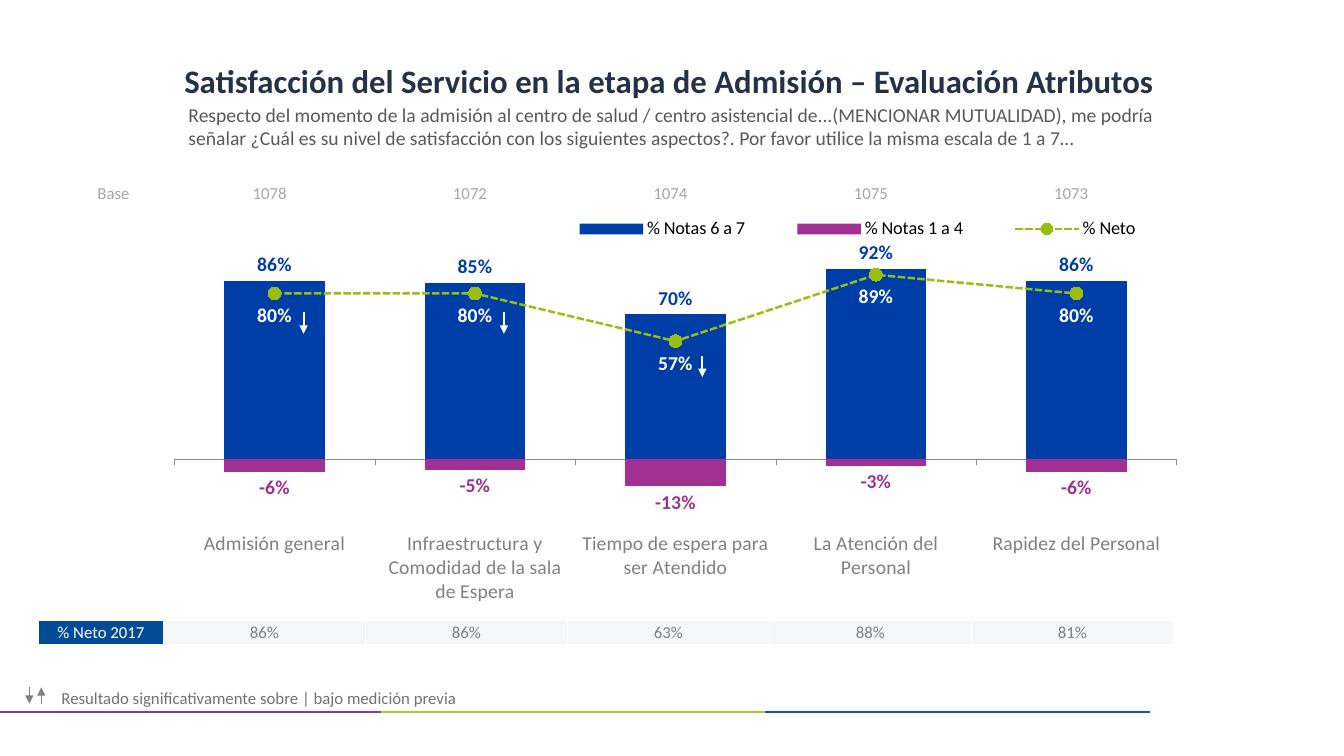
import pptx
import pptx.util
import pptx.dml.color
import pptx.chart.data
import pptx.enum.chart
import pptx.enum.dml
import pptx.enum.shapes
import pptx.enum.text
import pptx.oxml.ns
import pptx.oxml.xmlchemy
from lxml import etree

Cm, Pt = pptx.util.Cm, pptx.util.Pt
qn = pptx.oxml.ns.qn
make = pptx.oxml.xmlchemy.OxmlElement
enum = pptx.enum.chart

# Content
TITLE = "Satisfacción del Servicio en la etapa de Admisión – Evaluación Atributos"
ASK = ("Respecto del momento de la admisión al centro de salud / centro asistencial "
       "de...(MENCIONAR MUTUALIDAD), me podría señalar ¿Cuál es su nivel de satisfacción "
       "con los siguientes aspectos?. Por favor utilice la misma escala de 1 a 7…")
NOTE = "Resultado significativamente sobre | bajo medición previa"
CATS = ["Admisión general", "Infraestructura y Comodidad de la sala de Espera",
        "Tiempo de espera para ser Atendido", "La Atención del Personal",
        "Rapidez del Personal"]
BASE = ["Base", "1078", "1072", "1074", "1075", "1073"]
NET = ["% Neto 2017", "86%", "86%", "63%", "88%", "81%"]
# name, values, colour, label colour, label place
SERIES = [
    ("% Notas 6 a 7", (0.86, 0.85, 0.7, 0.92, 0.86), "blue", "blue", "OUTSIDE_END"),
    ("% Notas 1 a 4", (-0.06, -0.05, -0.13, -0.03, -0.06), "plum", "plum", "OUTSIDE_END"),
    ("% Neto", (0.8, 0.8, 0.57, 0.89, 0.8), "lime", "white", "BELOW"),
]
HEX = {"navy": "233247", "text": "595959", "blue": "003EA7", "plum": "A03192",
       "lime": "99BD13", "white": "FFFFFF", "gray": "808080", "pale": "A6A6A6",
       "note": "717274", "head": "044B95", "cell": "F5F6F8", "axis": "898989",
       "black": "000000", "foot1": "963791", "foot2": "A2CD3A", "foot3": "0B56A4"}
FOOT = [(0, 9.68, "foot1"), (9.6, 19.28, "foot2"), (19.28, 28.98, "foot3")]
# x, start y, end y, colour, width
ARROWS = [(7.65, 7.87, 8.41, "white", 1.5), (12.7, 7.87, 8.41, "white", 1.5),
          (17.7, 8.97, 9.5, "white", 1.5), (0.74, 17.32, 17.73, "gray", 0.75),
          (1.04, 17.73, 17.32, "gray", 0.75)]

deck = pptx.Presentation()
deck.slide_width, deck.slide_height = Cm(33.87), Cm(19.05)
slide = deck.slides.add_slide(deck.slide_layouts[5])


def rgb(key):
    return pptx.dml.color.RGBColor.from_string(HEX[key])


def style(font, size, key, bold=False):
    font.name, font.size, font.bold = "Calibri", Pt(size), bold
    font.color.rgb = rgb(key)


def line(x1, y1, x2, y2, key, width, tip=False):
    part = slide.shapes.add_connector(
        pptx.enum.shapes.MSO_CONNECTOR.STRAIGHT, Cm(x1), Cm(y1), Cm(x2), Cm(y2))
    part.line.color.rgb, part.line.width = rgb(key), Pt(width)
    if tip:
        edge = part._element.spPr.find(qn("a:ln"))
        etree.SubElement(edge, qn("a:tailEnd"), type="triangle")
    etree.SubElement(part._element.spPr, qn("a:effectLst"))


def label(text, x, y, w, h, size, key):
    box = slide.shapes.add_textbox(Cm(x), Cm(y), Cm(w), Cm(h))
    frame = box.text_frame
    frame.word_wrap = True
    frame.auto_size = pptx.enum.text.MSO_AUTO_SIZE.SHAPE_TO_FIT_TEXT
    frame.text = text
    style(frame.paragraphs[0].runs[0].font, size, key)


def border(cell):
    props = cell._tc.get_or_add_tcPr()
    for spot, side in enumerate(("a:lnL", "a:lnR", "a:lnT", "a:lnB")):
        edge = make(side)
        edge.set("w", str(int(Pt(0.5))))
        fill = etree.SubElement(edge, qn("a:solidFill"))
        etree.SubElement(fill, qn("a:srgbClr"), val=HEX["white"])
        props.insert(spot, edge)


def strip(texts, x, y, first, rest, tall, inks, fills):
    """One-row table: the first cell has its own width, ink and fill."""
    wide = [first] + [rest] * (len(texts) - 1)
    table = slide.shapes.add_table(
        1, len(texts), Cm(x), Cm(y), Cm(sum(wide)), Cm(tall)).table
    table.first_row = table.horz_banding = False
    table.rows[0].height = Cm(tall)
    for i, text in enumerate(texts):
        table.columns[i].width = Cm(wide[i])
        cell = table.cell(0, i)
        cell.margin_left = cell.margin_right = cell.margin_top = Cm(0.03)
        cell.margin_bottom = 0
        cell.vertical_anchor = pptx.enum.text.MSO_ANCHOR.MIDDLE
        cell.text_frame.text = text
        para = cell.text_frame.paragraphs[0]
        para.alignment = pptx.enum.text.PP_ALIGN.CENTER
        style(para.runs[0].font, 12, inks[i > 0])
        if fills:
            cell.fill.solid()
            cell.fill.fore_color.rgb = rgb(fills[i > 0])
        else:
            cell.fill.background()
        border(cell)


def layout(x, y, w, h, inner=False):
    root = make("c:layout")
    man = etree.SubElement(root, qn("c:manualLayout"))
    if inner:
        etree.SubElement(man, qn("c:layoutTarget"), val="inner")
    for tag in ("xMode", "yMode"):
        etree.SubElement(man, qn("c:" + tag), val="edge")
    for tag, val in zip("xywh", (x, y, w, h)):
        etree.SubElement(man, qn("c:" + tag), val=str(val))
    return root


# Footer rule
for x1, x2, key in FOOT:
    line(x1, 17.93, x2, 17.93, key, 1.5)

# Title and question
title = slide.shapes.title
title.left, title.top, title.width, title.height = Cm(3.15), Cm(1.37), Cm(27.41), Cm(1.42)
title.text_frame.text = TITLE
title.text_frame.vertical_anchor = pptx.enum.text.MSO_ANCHOR.MIDDLE
para = title.text_frame.paragraphs[0]
para.alignment, para.line_spacing = pptx.enum.text.PP_ALIGN.CENTER, 0.9
style(para.runs[0].font, 23.4, "navy", True)
label(ASK, 4.5, 2.46, 25.07, 1.45, 14, "text")

# Chart
data = pptx.chart.data.CategoryChartData(number_format="0%")
data.categories = CATS
for name, vals, *_ in SERIES:
    data.add_series(name, vals)
chart = slide.shapes.add_chart(enum.XL_CHART_TYPE.COLUMN_CLUSTERED, Cm(3.68), Cm(5.03),
                               Cm(26.37), Cm(12.34), data).chart
chart.has_title = False
style(chart.font, 13.7, "black", True)
chart.font.name = "TeX Gyre Adventor"
bars = chart.plots[0]
bars.gap_width, bars.overlap, bars.vary_by_categories = 100, 100, False

# Third series becomes a line on the same axes
bar = bars._element
curve = make("c:lineChart")
etree.SubElement(curve, qn("c:grouping"), val="standard")
etree.SubElement(curve, qn("c:varyColors"), val="0")
ser = bar.findall(qn("c:ser"))[2]
for flag in ser.findall(qn("c:invertIfNegative")):
    ser.remove(flag)
curve.append(ser)
etree.SubElement(curve, qn("c:marker"), val="1")
for ref in bar.findall(qn("c:axId")):
    etree.SubElement(curve, qn("c:axId"), val=ref.get("val"))
bar.addnext(curve)

for row, (_, _, key, ink, spot) in zip(
        [s for plot in chart.plots for s in plot.series], SERIES):
    if spot == "BELOW":
        row.smooth = False
        row.format.line.color.rgb, row.format.line.width = rgb(key), Pt(1.75)
        row.format.line.dash_style = pptx.enum.dml.MSO_LINE.SQUARE_DOT
        row.marker.style, row.marker.size = enum.XL_MARKER_STYLE.CIRCLE, 9
        row.marker.format.line.color.rgb = rgb(key)
        fill = row.marker.format.fill
    else:
        row.invert_if_negative = False
        fill = row.format.fill
    fill.solid()
    fill.fore_color.rgb = rgb(key)
    tags = row.data_labels
    tags.show_value = True
    tags.number_format, tags.number_format_is_linked = "0%", False
    tags.position = getattr(enum.XL_LABEL_POSITION, spot)
    style(tags.font, 14, ink, True)

# Axes, plot area and legend
cat, val = chart.category_axis, chart.value_axis
cat.tick_label_position = enum.XL_TICK_LABEL_POSITION.LOW
cat.major_tick_mark = enum.XL_TICK_MARK.OUTSIDE
cat.format.line.color.rgb, cat.format.line.width = rgb("axis"), Pt(0.25)
style(cat.tick_labels.font, 14, "gray")
val.minimum_scale, val.maximum_scale, val.major_unit = -0.3, 1, 0.2
val.has_major_gridlines = False
val.tick_label_position = enum.XL_TICK_LABEL_POSITION.NONE
val.format.line.fill.background()
area = bar.getparent()
for old in area.findall(qn("c:layout")):
    area.remove(old)
area.insert(0, layout(0.027, 0.107, 0.958, 0.551, True))
chart.has_legend = True
key = chart.legend
key.position, key.include_in_layout = enum.XL_LEGEND_POSITION.LEFT, False
style(key.font, 13, "black")
for old in key._element.findall(qn("c:layout")):
    key._element.remove(old)
key._element.find(qn("c:legendPos")).addnext(layout(0.37, 0.03, 0.62, 0.06))

# Tables
strip(NET, 0.97, 15.62, 3.15, 5.09, 0.61, ("white", "gray"), ("head", "cell"))
strip(BASE, 1.45, 4.55, 2.82, 5.05, 0.66, ("pale", "pale"), None)

# Note and arrows
label(NOTE, 1.3, 17.2, 11.13, 0.76, 12, "note")
for x, y1, y2, ink, width in ARROWS:
    line(x, y1, x, y2, ink, width, True)

deck.save("out.pptx")
